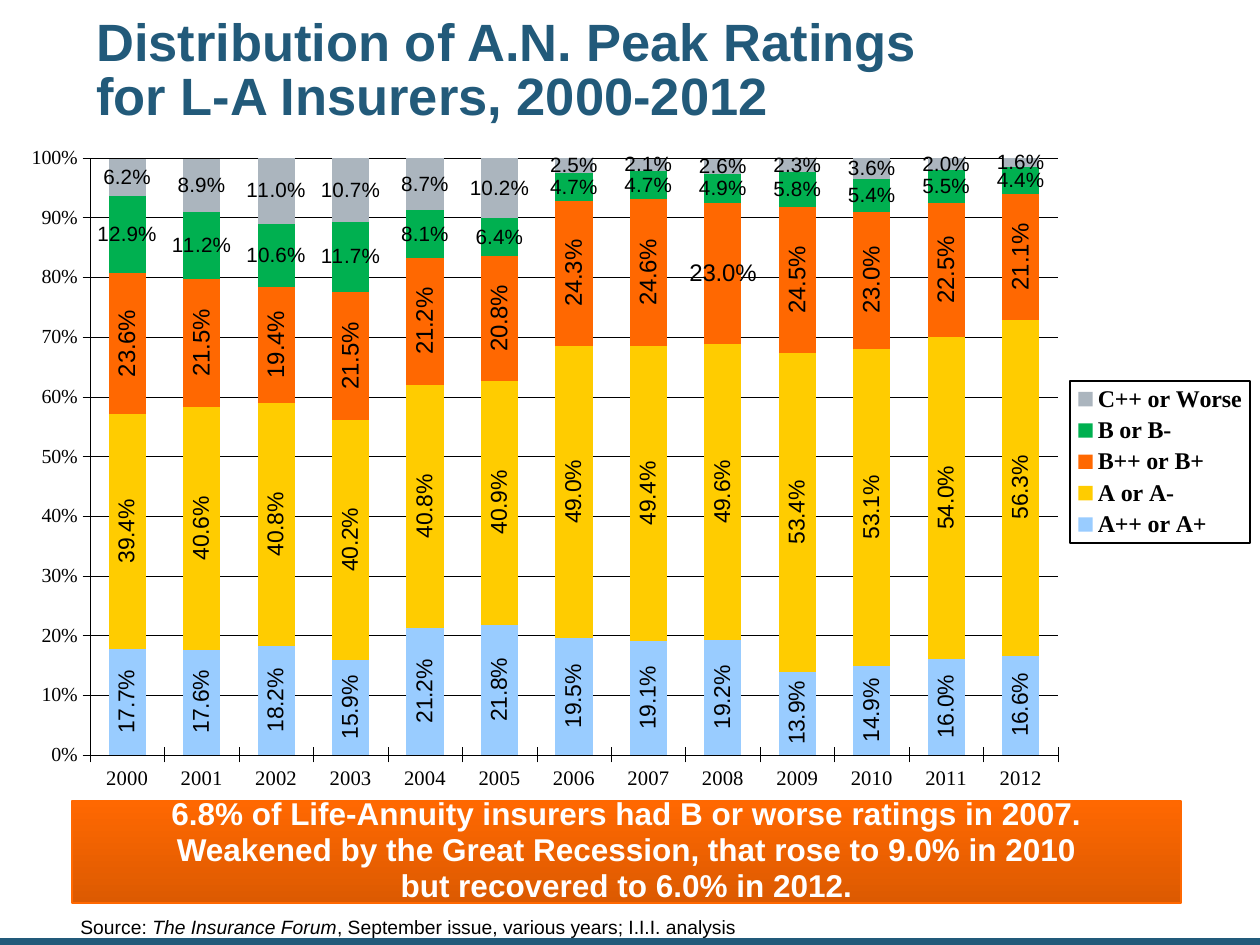
from lxml.etree import SubElement
from pptx import Presentation
from pptx.chart.data import CategoryChartData
from pptx.dml.color import RGBColor
from pptx.enum.chart import XL_CHART_TYPE as ChartType, XL_LABEL_POSITION as LabelPosition
from pptx.enum.chart import XL_LEGEND_POSITION as LegendPosition, XL_TICK_MARK as TickMark
from pptx.enum.shapes import MSO_SHAPE as Shape
from pptx.enum.text import MSO_ANCHOR as Anchor, PP_ALIGN as Align
from pptx.oxml import parse_xml
from pptx.oxml.ns import nsdecls, qn
from pptx.util import Pt

PX = 914400 / 126
BLUE, ORANGE, DARK_ORANGE = "225A7A", "FF6801", "DC5A01"
BLACK, WHITE = "000000", "FFFFFF"
SANS, SERIF = "Arial", "Times New Roman"

YEARS = [str(year) for year in range(2000, 2013)]
# name, colour, label size, label rotation in degrees, percentages
RATINGS = [
    ("A++ or A+", "99CCFF", 13.1, -90,
     [17.7, 17.6, 18.2, 15.9, 21.2, 21.8, 19.5, 19.1, 19.2, 13.9, 14.9, 16.0, 16.6]),
    ("A or A-", "FFCC00", 13.1, -90,
     [39.4, 40.6, 40.8, 40.2, 40.8, 40.9, 49.0, 49.4, 49.6, 53.4, 53.1, 54.0, 56.3]),
    ("B++ or B+", ORANGE, 13.7, -90,
     [23.6, 21.5, 19.4, 21.5, 21.2, 20.8, 24.3, 24.6, 23.6, 24.5, 23.0, 22.5, 21.1]),
    ("B or B-", "00B050", 11.8, 0,
     [12.9, 11.2, 10.6, 11.7, 8.1, 6.4, 4.7, 4.7, 4.9, 5.8, 5.4, 5.5, 4.4]),
    ("C++ or Worse", "ABB5BE", 11.8, 0,
     [6.2, 8.9, 11.0, 10.7, 8.7, 10.2, 2.5, 2.1, 2.6, 2.3, 3.6, 2.0, 1.6]),
]


def emu(*lengths):
    return [round(length * PX) for length in lengths]


def color(hex_code):
    return RGBColor.from_string(hex_code)


def set_font(font, size, hex_code=BLACK, name=SANS, bold=False, italic=False):
    font.size, font.name, font.bold, font.italic = Pt(size), name, bold, italic
    font.color.rgb = color(hex_code)


def set_line(line, hex_code, width):
    line.color.rgb = color(hex_code)
    line.width = Pt(width)


def add_lines(paragraph, lines, **font):
    for index, text in enumerate(lines):
        if index:
            paragraph.add_line_break()
        run = paragraph.add_run()
        run.text = text
        set_font(run.font, **font)


def add_rectangle(slide, box):
    shape = slide.shapes.add_shape(Shape.RECTANGLE, *emu(*box))
    shape.shadow.inherit = False
    return shape


def add_footer_bar(slide, box):
    bar = add_rectangle(slide, box)
    bar.fill.solid()
    bar.fill.fore_color.rgb = color(BLUE)
    bar.line.fill.background()


def add_title(slide, box):
    frame = slide.shapes.add_textbox(*emu(*box)).text_frame
    frame.word_wrap = True
    frame.vertical_anchor = Anchor.BOTTOM
    paragraph = frame.paragraphs[0]
    paragraph.line_spacing = 0.85
    add_lines(paragraph, ["Distribution of A.N. Peak Ratings", "for L-A Insurers, 2000-2012"],
              size=30, hex_code=BLUE, bold=True)


def set_layout(parent, position, box, chart_box, inner=False):
    """Place a chart part by a box in px, relative to the chart."""
    for old in parent.findall(qn("c:layout")):
        parent.remove(old)
    layout = parse_xml(f"<c:layout {nsdecls('c')}><c:manualLayout/></c:layout>")
    manual = layout[0]
    if inner:
        SubElement(manual, qn("c:layoutTarget")).set("val", "inner")
    for tag in ("xMode", "yMode"):
        SubElement(manual, qn(f"c:{tag}")).set("val", "edge")
    for tag, length, whole in zip("xywh", box, chart_box[2:] * 2):
        SubElement(manual, qn(f"c:{tag}")).set("val", f"{length / whole:.4f}")
    parent.insert(position, layout)


def style_axis(axis, size):
    axis.major_tick_mark = TickMark.CROSS
    axis.minor_tick_mark = TickMark.NONE
    set_line(axis.format.line, BLACK, 0.2)
    set_font(axis.tick_labels.font, size, name=SERIF)


def style_series(series, hex_code, label_size, rotation):
    series.format.fill.solid()
    series.format.fill.fore_color.rgb = color(hex_code)
    labels = series.data_labels
    labels.show_value = True
    labels.number_format, labels.number_format_is_linked = "0.0%", False
    labels.position = LabelPosition.CENTER
    set_font(labels.font, label_size)
    body = labels._element.find(qn("c:txPr")).find(qn("a:bodyPr"))
    body.set("rot", str(rotation * 60000))
    body.set("vert", "horz")


def add_legend(chart, box, chart_box):
    chart.has_legend = True
    legend = chart.legend
    legend.position = LegendPosition.RIGHT
    legend.include_in_layout = False
    set_font(legend.font, 13.7, name=SERIF, bold=True)
    element = legend._element
    set_layout(element, 1, box, chart_box)
    border = parse_xml(
        f'<c:spPr {nsdecls("c", "a")}><a:solidFill><a:srgbClr val="{WHITE}"/></a:solidFill>'
        f'<a:ln w="9525"><a:solidFill><a:srgbClr val="{BLACK}"/></a:solidFill></a:ln></c:spPr>')
    element.find(qn("c:txPr")).addprevious(border)


def add_ratings_chart(slide, box):
    data = CategoryChartData(number_format="0.0%")
    data.categories = YEARS
    for name, *_, percentages in RATINGS:
        data.add_series(name, [round(value / 100, 3) for value in percentages])
    chart = slide.shapes.add_chart(ChartType.COLUMN_STACKED, *emu(*box), data).chart
    chart.has_title = False
    set_font(chart.font, 14.7, name=SERIF, bold=True)

    # Axes
    style_axis(chart.category_axis, 11.8)
    axis = chart.value_axis
    style_axis(axis, 11.4)
    axis.minimum_scale, axis.maximum_scale, axis.major_unit = 0, 1, 0.1
    axis.tick_labels.number_format, axis.tick_labels.number_format_is_linked = "0%", False
    axis.has_major_gridlines = True
    set_line(axis.major_gridlines.format.line, BLACK, 0.2)

    # Columns
    plot = chart.plots[0]
    plot.gap_width, plot.overlap, plot.vary_by_categories = 100, 100, False
    for series, (_, hex_code, size, rotation, _) in zip(plot.series, RATINGS):
        style_series(series, hex_code, size, rotation)

    # One horizontal label with its own wording
    label = plot.series[2].points[YEARS.index("2008")].data_label
    add_lines(label.text_frame.paragraphs[0], ["23.0%"], size=13.7)
    label.position = LabelPosition.CENTER

    plot_area = chart._chartSpace.chart.plotArea
    set_layout(plot_area, 0, (98, 42, 968, 597), box, inner=True)
    add_legend(chart, (1078, 265, 180, 162), box)


def add_source(slide, box):
    frame = slide.shapes.add_textbox(*emu(*box)).text_frame
    frame.word_wrap = False
    for text, italic in [("Source: ", False), ("The Insurance Forum", True),
                         (", September issue, various years; I.I.I. analysis", False)]:
        add_lines(frame.paragraphs[0], [text], size=11, italic=italic)


def add_callout(slide, box):
    callout = add_rectangle(slide, box)
    callout.fill.gradient()
    callout.fill.gradient_angle = 270
    for stop, hex_code, position in zip(callout.fill.gradient_stops, (ORANGE, DARK_ORANGE), (0, 1)):
        stop.color.rgb = color(hex_code)
        stop.position = position
    set_line(callout.line, ORANGE, 1)
    frame = callout.text_frame
    frame.word_wrap = True
    frame.vertical_anchor = Anchor.MIDDLE
    frame.margin_bottom = emu(9)[0]
    paragraph = frame.paragraphs[0]
    paragraph.alignment = Align.CENTER
    paragraph.line_spacing = 0.95
    add_lines(paragraph, ["6.8% of Life-Annuity insurers had B or worse ratings in 2007.",
                          "Weakened by the Great Recession, that rose to 9.0% in 2010",
                          "but recovered to 6.0% in 2012."],
              size=18, hex_code=WHITE, bold=True)


def main():
    presentation = Presentation()
    presentation.slide_width, presentation.slide_height = emu(1260, 945)
    slide = presentation.slides.add_slide(presentation.slide_layouts[6])
    add_footer_bar(slide, (0, 938, 1260, 7))
    add_title(slide, (84, 24, 1071, 108))
    add_ratings_chart(slide, (-8, 116, 1268, 693))
    add_source(slide, (68, 909, 684, 36))
    add_callout(slide, (72, 801, 1109, 102))
    presentation.save("out.pptx")


if __name__ == "__main__":
    main()
